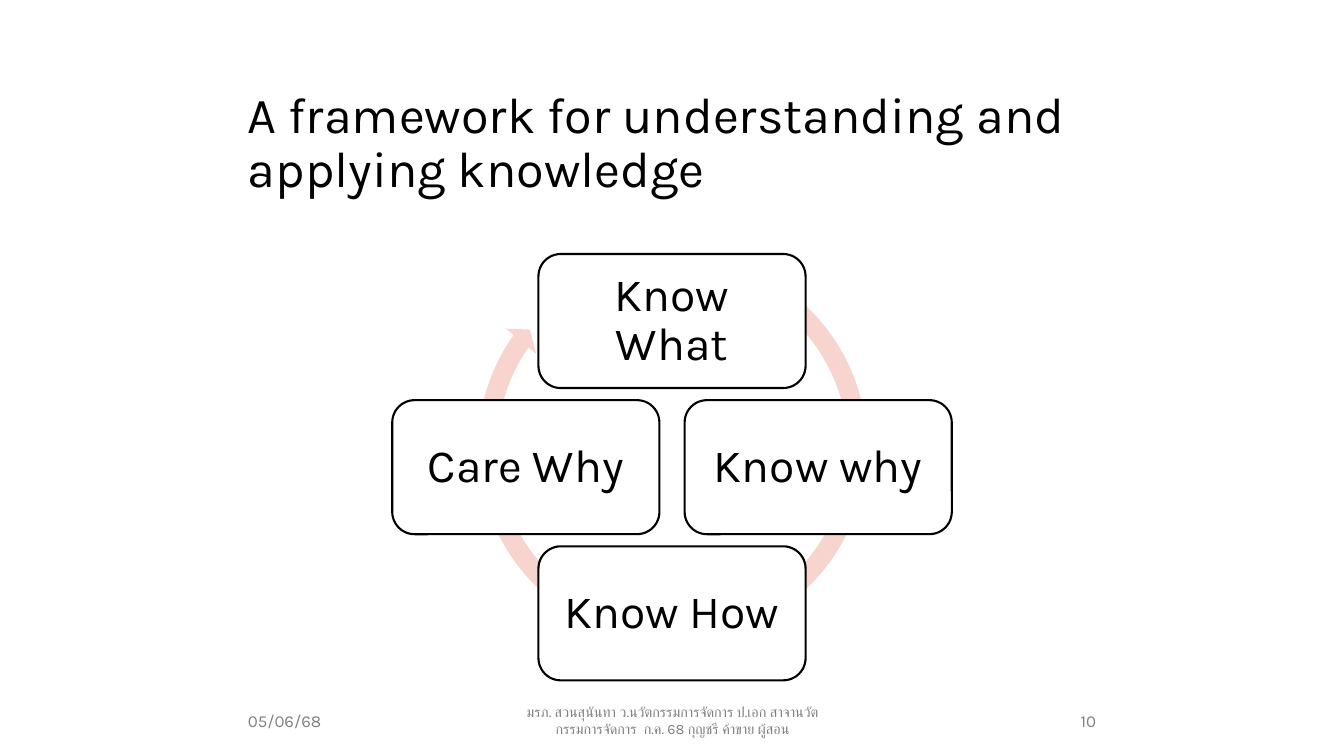
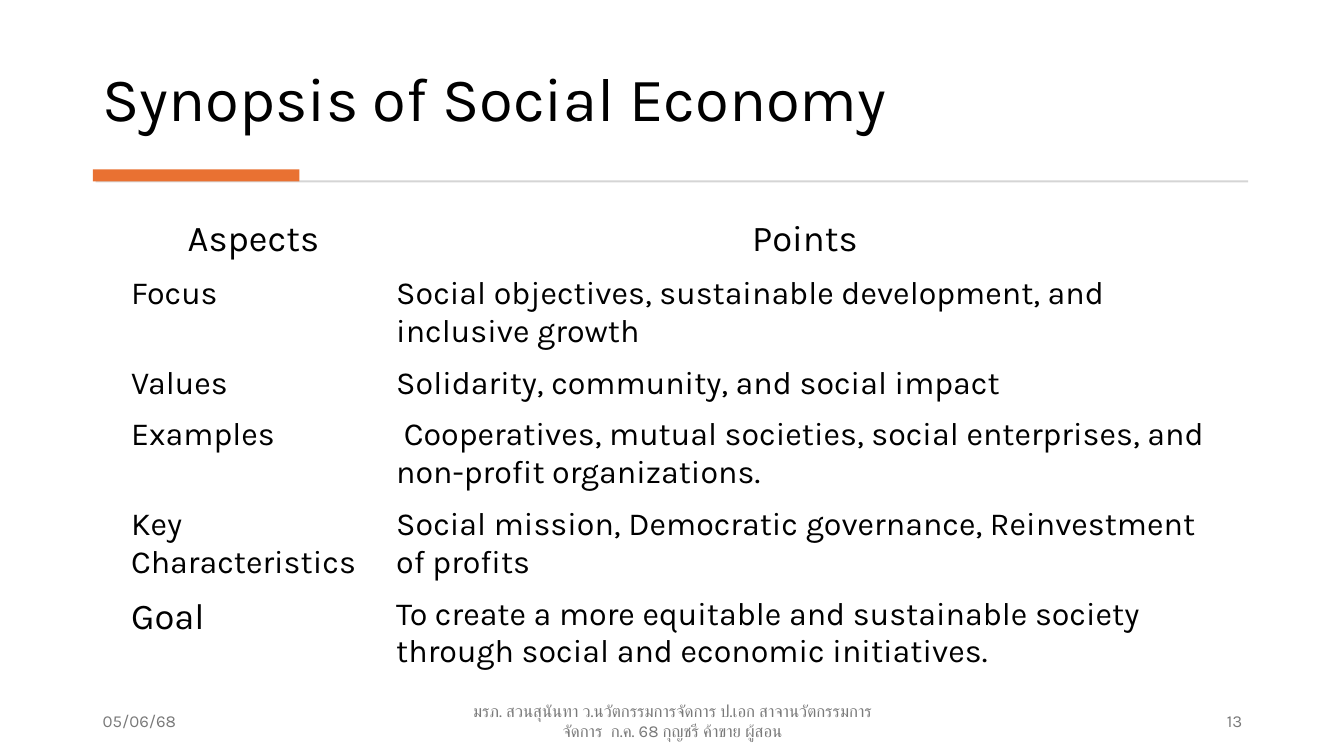
from pptx import Presentation
from pptx.dml.color import RGBColor
from pptx.enum.shapes import MSO_SHAPE
from pptx.enum.text import MSO_ANCHOR, PP_ALIGN
from pptx.util import Pt

PX = 9144
FONT = "Karla"
LEFT, CENTER, RIGHT = PP_ALIGN.LEFT, PP_ALIGN.CENTER, PP_ALIGN.RIGHT
BOTTOM, MIDDLE = MSO_ANCHOR.BOTTOM, MSO_ANCHOR.MIDDLE
RECT, ROUND = MSO_SHAPE.RECTANGLE, MSO_SHAPE.ROUNDED_RECTANGLE
CYCLE = MSO_SHAPE.CIRCULAR_ARROW
INK = {"text": "000000", "paper": "FFFFFF", "ring": "F7D5CE", "rule": "D5D5D5",
       "accent": "E97132", "foot": "808080", "muted": "797979"}
DATE = "05/06/68"
COURSE = ("มรภ. สวนสุนันทา ว.นวัตกรรมการจัดการ ป.เอก "
          "สาจานวัตกรรมการจัดการ  ก.ค. 68 กุญชรี ค้าขาย ผู้สอน")
STEPS = [("Know What", 0, -1), ("Know why", 1, 0),
         ("Know How", 0, 1), ("Care Why", -1, 0)]
ROWS = [
    ("Aspects", "Points"),
    ("Focus", "Social objectives, sustainable development, and inclusive growth"),
    ("Values", "Solidarity, community, and social impact"),
    ("Examples", " Cooperatives, mutual societies, social enterprises, "
                 "and non-profit organizations."),
    ("Key Characteristics",
     "Social mission, Democratic governance, Reinvestment of profits"),
    ("Goal", "To create a more equitable and sustainable society through "
             "social and economic initiatives."),
]
WIDTHS = [263, 831]
HEIGHTS = [57, 89, 51, 89, 89, 102]


def color(name):
    return RGBColor.from_string(INK[name])


def emu(*lengths):
    return [length * PX for length in lengths]


def apply(item, values):
    for name, value in values.items():
        setattr(item, name, value)


def write(frame, text, size, ink="text", **form):
    para = frame.paragraphs[0]
    apply(para, form)
    run = para.add_run()
    run.text = text
    apply(run.font, {"name": FONT, "size": Pt(size)})
    run.font.color.rgb = color(ink)


def label(slide, box, text, size, ink="text", anchor=MIDDLE, **form):
    frame = slide.shapes.add_textbox(*emu(*box)).text_frame
    apply(frame, {"word_wrap": True, "vertical_anchor": anchor})
    write(frame, text, size, ink, **form)


def title(slide, box, text, size, **form):
    label(slide, box, text, size, anchor=BOTTOM, line_spacing=0.9, **form)


def footer(slide, spans, number, ink, size, **form):
    parts = [(DATE, 12, LEFT), (COURSE, size, CENTER), (number, 12, RIGHT)]
    for (left, width), (text, points, align) in zip(spans, parts):
        label(slide, (left, 695, width, 40), text, points, ink,
              alignment=align, **form)


def block(shapes, kind, box, fill):
    shape = shapes.add_shape(kind, *emu(*box))
    shape.shadow.inherit = False
    shape.fill.solid()
    shape.fill.fore_color.rgb = color(fill)
    shape.line.fill.background()
    return shape


def step(shapes, box, text):
    shape = block(shapes, ROUND, box, "paper")
    shape.line.color.rgb = color("text")
    shape.line.width = Pt(1.5)
    frame = shape.text_frame
    apply(frame, {"word_wrap": True, "vertical_anchor": MIDDLE})
    apply(frame, {"margin_" + side: 14 * PX
                  for side in ("left", "top", "right", "bottom")})
    write(frame, text, 33, alignment=CENTER, line_spacing=0.9)


def cycle(slide):
    shapes = slide.shapes.add_group_shape().shapes
    ring = block(shapes, CYCLE, (464, 241, 406, 406), "ring")
    for index, value in enumerate([0.047, 2.729, 129.038, 179.817, 0.048]):
        ring.adjustments[index] = value
    for text, across, down in STEPS:
        step(shapes, (534 + 145 * across, 397 + 145 * down, 265, 133), text)


def grid(slide):
    box = emu(120, 211, sum(WIDTHS), sum(HEIGHTS))
    table = slide.shapes.add_table(len(ROWS), len(WIDTHS), *box).table
    apply(table, {"first_row": False, "horz_banding": False})
    for column, width in zip(table.columns, WIDTHS):
        column.width = width * PX
    for row, height, texts in zip(table.rows, HEIGHTS, ROWS):
        row.height = height * PX
        head = texts == ROWS[0]
        for cell, text in zip(row.cells, texts):
            cell.fill.solid()
            cell.fill.fore_color.rgb = color("paper")
            size = 26 if head or text == "Goal" else 23
            write(cell.text_frame, text, size,
                  alignment=CENTER if head else LEFT)


def main():
    deck = Presentation()
    apply(deck, {"slide_width": 1333 * PX, "slide_height": 750 * PX})
    blank = deck.slide_layouts[6]

    know = deck.slides.add_slide(blank)
    title(know, (236, 75, 862, 127),
          "A framework for understanding and applying knowledge", 36,
          space_after=Pt(6))
    footer(know, [(236, 202), (498, 338), (893, 204)], "10", "foot", 10.2,
           space_after=Pt(6))
    cycle(know)

    social = deck.slides.add_slide(blank)
    title(social, (92, 28, 1149, 111), "Synopsis of Social Economy", 44)
    block(social.shapes, RECT, (95, 179, 1143, 2), "rule")
    block(social.shapes, RECT, (92, 168, 205, 12), "accent")
    grid(social)
    footer(social, [(92, 300), (442, 450), (942, 300)], "13", "muted", 12)

    deck.save("out.pptx")


if __name__ == "__main__":
    main()
